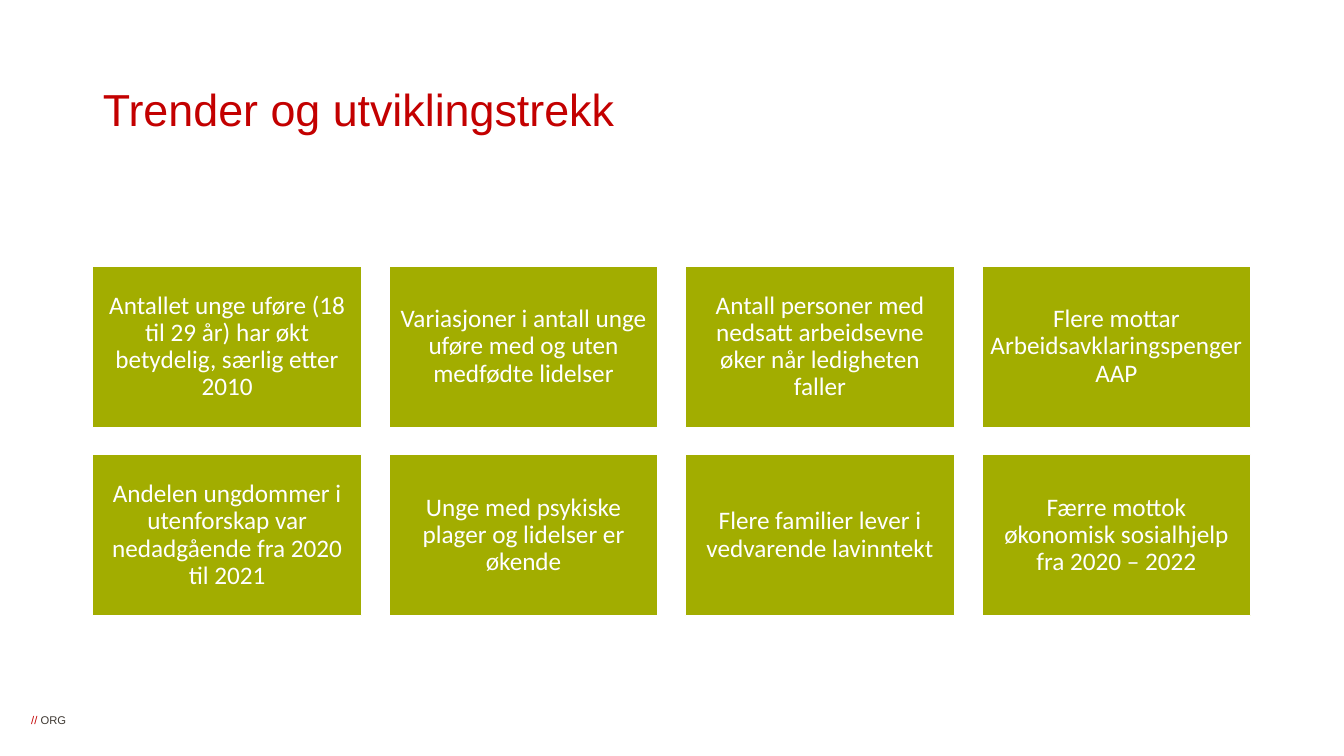
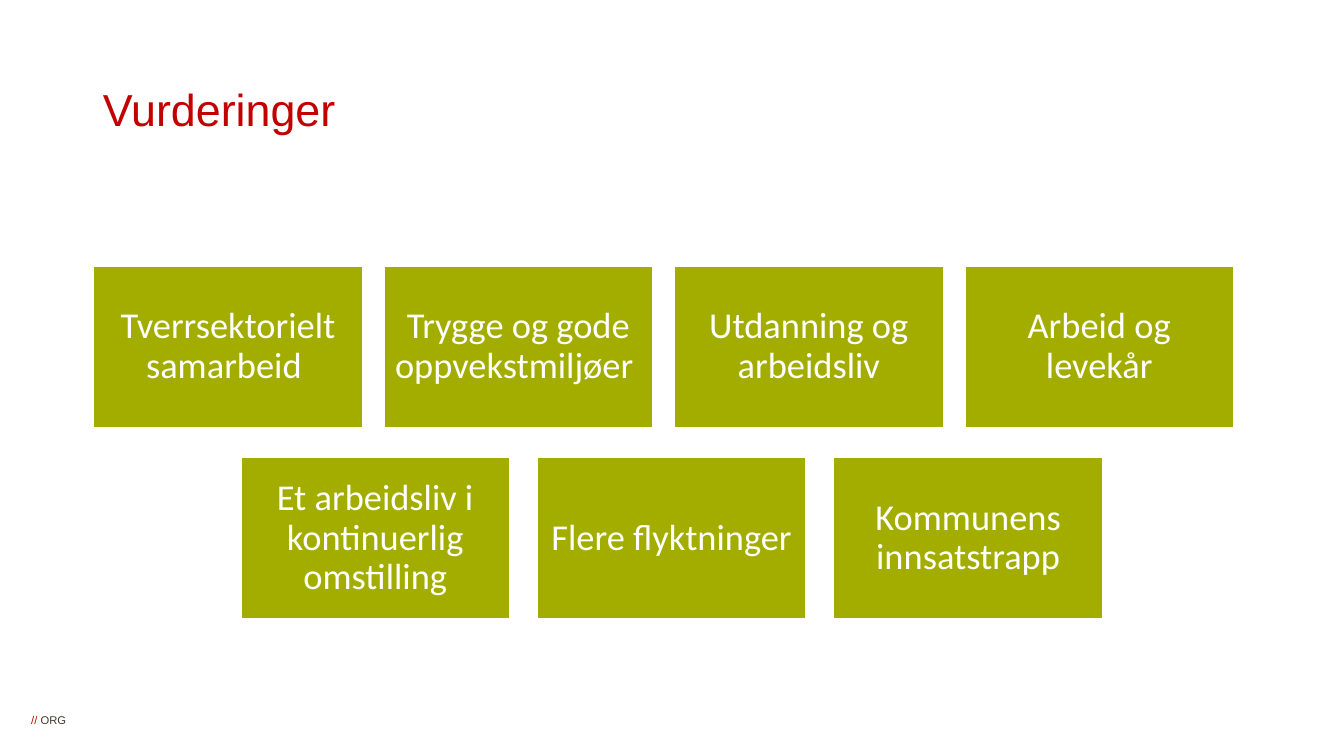
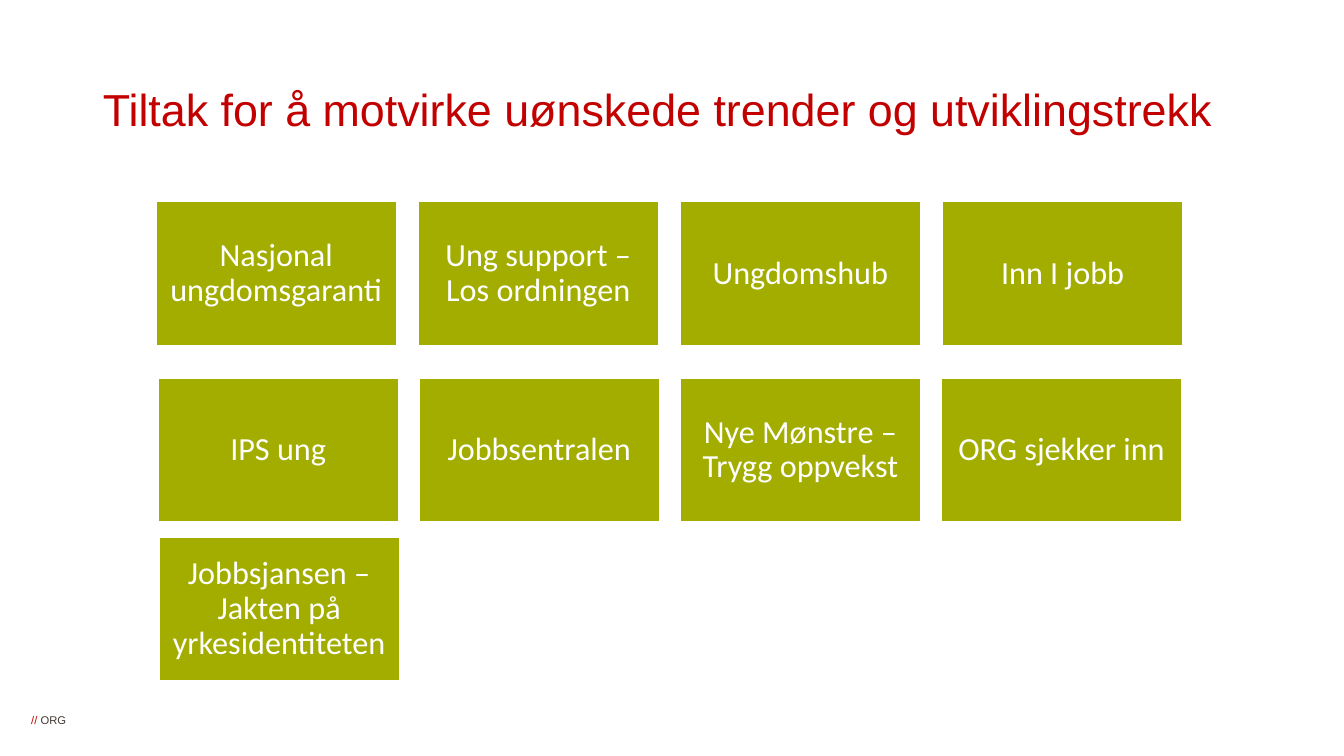
"""Build three slides of card grids about trends, assessments and measures for young people."""
from pptx import Presentation
from pptx.dml.color import RGBColor
from pptx.enum.shapes import MSO_SHAPE
from pptx.enum.text import MSO_ANCHOR, MSO_AUTO_SIZE, PP_ALIGN
from pptx.util import Inches, Pt

RECTANGLE = MSO_SHAPE.RECTANGLE
MIDDLE = MSO_ANCHOR.MIDDLE
LEFT, CENTER = PP_ALIGN.LEFT, PP_ALIGN.CENTER
NO_AUTOFIT = MSO_AUTO_SIZE.NONE

RED, GREEN, WHITE, DARK = "C30000", "A2AD00", "FFFFFF", "3E3832"
WIDTH, HEIGHT = 13.33, 7.5
CARD_RATIO = 0.6


def style(font, name, size, color):
    """Set typeface, size and colour of a font."""
    font.name = name
    font.size = Pt(size)
    font.color.rgb = RGBColor.from_string(color)


def place(part, left, top, width, height):
    """Move and size a part, in inches."""
    part.left, part.top = Inches(left), Inches(top)
    part.width, part.height = Inches(width), Inches(height)


topics = [
    ("Trender og utviklingstrekk", 18, WIDTH * 0.2, [
        (0.92, 2.64, 2.94, [
            "Antallet unge uføre (18 til 29 år) har økt betydelig, særlig etter 2010",
            "Variasjoner i antall unge uføre med og uten medfødte lidelser",
            "Antall personer med nedsatt arbeidsevne øker når ledigheten faller",
            "Flere mottar Arbeidsavklaringspenger AAP"]),
        (0.92, 4.51, 2.94, [
            "Andelen ungdommer i utenforskap var nedadgående fra 2020 til 2021",
            "Unge med psykiske plager og lidelser er økende",
            "Flere familier lever i vedvarende lavinntekt",
            "Færre mottok økonomisk sosialhjelp fra 2020 – 2022"]),
    ]),
    ("Vurderinger", 26, WIDTH * 0.2, [
        (0.93, 2.64, 2.88, [
            "Tverrsektorielt samarbeid ",
            "Trygge og gode oppvekstmiljøer ",
            "Utdanning og arbeidsliv",
            "Arbeid og levekår"]),
        (2.39, 4.54, 2.94, [
            "Et arbeidsliv i kontinuerlig omstilling",
            "Flere flyktninger",
            "Kommunens innsatstrapp"]),
    ]),
    ("Tiltak for å motvirke uønskede trender og utviklingstrekk", 23, 2.38, [
        (1.55, 2, 2.6, [
            "Nasjonal ungdomsgaranti",
            "Ung support – Los ordningen",
            "Ungdomshub",
            "Inn I jobb"]),
        (1.57, 3.75, 2.59, [
            "IPS ung",
            "Jobbsentralen",
            "Nye Mønstre – Trygg oppvekst",
            "ORG sjekker inn"]),
        (1.58, 5.33, 2.6, ["Jobbsjansen – Jakten på yrkesidentiteten"]),
    ]),
]

deck = Presentation()
deck.slide_width, deck.slide_height = Inches(WIDTH), Inches(HEIGHT)
title_only = deck.slide_layouts[5]

for heading, text_size, card_width, rows in topics:
    slide = deck.slides.add_slide(title_only)

    footer = slide.shapes.add_textbox(Inches(0.27), Inches(7.08), Inches(0.6), Inches(0.13))
    footer_text = footer.text_frame
    footer_text.margin_left = Inches(0.04)
    footer_text.margin_top = footer_text.margin_right = footer_text.margin_bottom = 0
    footer_line = footer_text.paragraphs[0]
    for words, color in (("// ", RED), ("ORG", DARK)):
        run = footer_line.add_run()
        run.text = words
        style(run.font, "Arial", 8, color)

    title = slide.shapes.title
    place(title, 0.92, 0.53, 11.5, 1.17)
    title.text_frame.text = heading
    title.text_frame.auto_size = NO_AUTOFIT
    title.text_frame.vertical_anchor = MIDDLE
    title_line = title.text_frame.paragraphs[0]
    title_line.alignment = LEFT
    title_line.line_spacing = 0.9
    style(title_line.font, "Arial", 32, RED)

    for left, top, pitch, statements in rows:
        for column, statement in enumerate(statements):
            card = slide.shapes.add_shape(RECTANGLE, 0, 0, 0, 0)
            place(card, left + column * pitch, top, card_width, card_width * CARD_RATIO)
            card.shadow.inherit = False
            card.fill.solid()
            card.fill.fore_color.rgb = RGBColor.from_string(GREEN)
            card.line.color.rgb = RGBColor.from_string(WHITE)
            card.line.width = Pt(1)
            frame = card.text_frame
            frame.word_wrap = True
            frame.vertical_anchor = MIDDLE
            inset = Pt(text_size * 0.3)
            frame.margin_left = frame.margin_right = inset
            frame.margin_top = frame.margin_bottom = inset
            frame.text = statement
            card_line = frame.paragraphs[0]
            card_line.alignment = CENTER
            card_line.line_spacing = 0.9
            style(card_line.font, "Calibri", text_size, WHITE)

deck.save("out.pptx")
